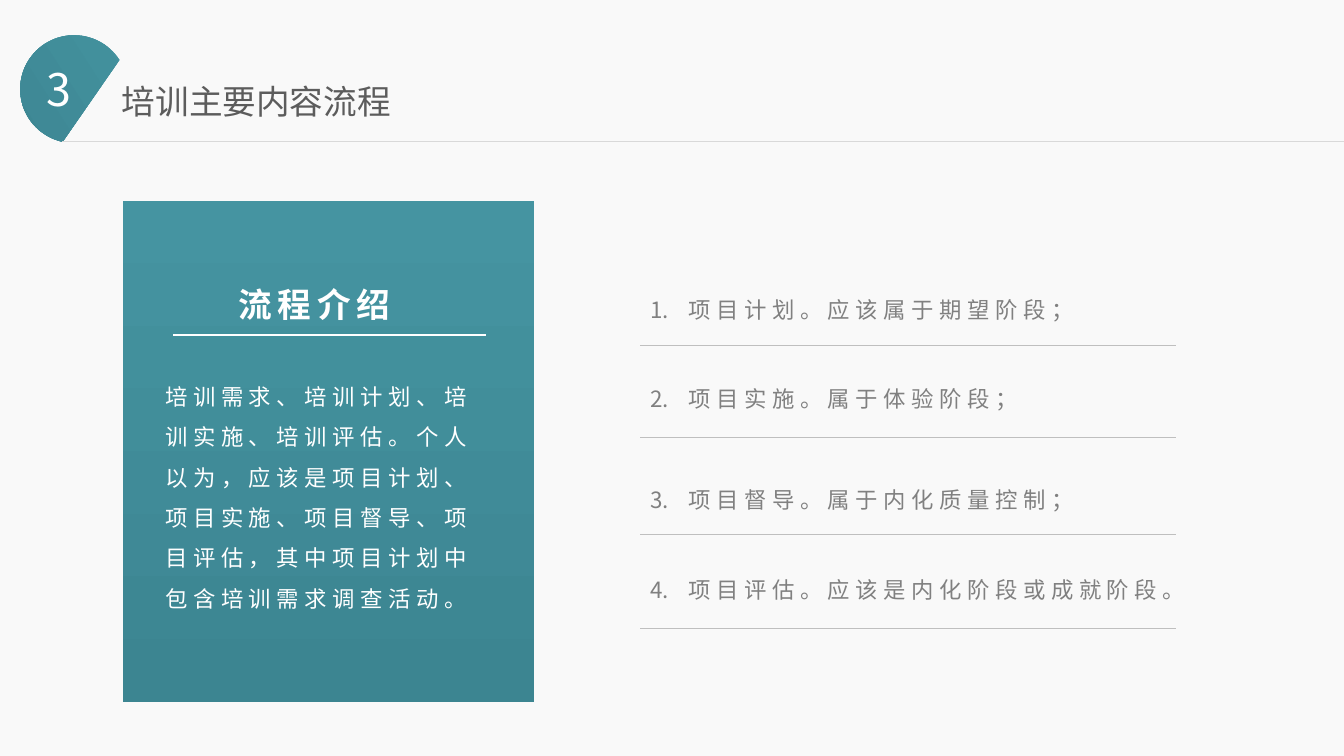
from dataclasses import dataclass
from typing import Optional

from lxml.etree import SubElement
from pptx import Presentation
from pptx.dml.color import RGBColor
from pptx.dml.fill import FillFormat
from pptx.enum.shapes import MSO_CONNECTOR, MSO_SHAPE
from pptx.enum.text import MSO_AUTO_SIZE
from pptx.oxml.ns import qn
from pptx.slide import Slide
from pptx.util import Inches, Pt

FONT = "Noto Sans CJK JP"
COLORS = {
    "background": "F9F9F9",
    "teal_light": "4594A1",
    "teal_dark": "3C8591",
    "title_light": "5C5C5C",
    "title_dark": "2F2F31",
    "white": "FFFFFF",
    "item": "808080",
    "header_rule": "D9D9D9",
    "item_rule": "BFBFBF",
}


@dataclass
class Panel:
    preset: MSO_SHAPE
    left: float
    top: float
    width: float
    height: float
    rotation: float = 0


@dataclass
class Rule:
    left: float
    right: float
    y: float
    color: str
    weight: float


@dataclass
class Label:
    text: str
    left: float
    top: float
    width: float
    height: float
    size: float
    color: str
    color_end: Optional[str] = None
    bold: bool = False
    spacing: float = 0
    line_spacing: float = 1
    number: Optional[int] = None


def rgb(name: str) -> RGBColor:
    return RGBColor.from_string(COLORS[name])


def set_gradient(fill: FillFormat, start: str, end: str, angle: float) -> None:
    fill.gradient()
    fill.gradient_angle = angle
    for stop, name, position in zip(fill.gradient_stops, (start, end), (0, 1)):
        stop.color.rgb = rgb(name)
        stop.position = position


def add_panel(page: Slide, panel: Panel) -> None:
    shape = page.shapes.add_shape(
        panel.preset, Inches(panel.left), Inches(panel.top),
        Inches(panel.width), Inches(panel.height))
    shape.rotation = panel.rotation
    shape.shadow.inherit = False
    shape.line.fill.background()
    set_gradient(shape.fill, "teal_light", "teal_dark", 270)


def add_rule(page: Slide, rule: Rule) -> None:
    line = page.shapes.add_connector(
        MSO_CONNECTOR.STRAIGHT, Inches(rule.left), Inches(rule.y),
        Inches(rule.right), Inches(rule.y))
    line.line.color.rgb = rgb(rule.color)
    line.line.width = Pt(rule.weight)
    SubElement(line._element.spPr, qn("a:effectLst"))


def add_label(page: Slide, label: Label) -> None:
    box = page.shapes.add_textbox(
        Inches(label.left), Inches(label.top),
        Inches(label.width), Inches(label.height))
    frame = box.text_frame
    frame.word_wrap = True
    frame.auto_size = MSO_AUTO_SIZE.SHAPE_TO_FIT_TEXT
    frame.text = label.text
    para = frame.paragraphs[0]
    para.line_spacing = label.line_spacing

    span = para.runs[0]
    span.font.size = Pt(label.size)
    span.font.bold = label.bold
    span.font.name = FONT
    if label.color_end:
        set_gradient(span.font.fill, label.color, label.color_end, 180)
    else:
        span.font.color.rgb = rgb(label.color)
    properties = span._r.get_or_add_rPr()
    properties.set("spc", str(round(label.spacing * 100)))
    SubElement(properties, qn("a:ea"), typeface=FONT)

    # Automatic numbering with a hanging indent
    if label.number is not None:
        layout = para._p.get_or_add_pPr()
        indent = Inches(0.38)
        layout.set("marL", str(indent))
        layout.set("indent", str(-indent))
        SubElement(layout, qn("a:buFont"), typeface="+mj-lt")
        SubElement(layout, qn("a:buAutoNum"), type="arabicPeriod",
                   startAt=str(label.number))


def main() -> None:
    deck = Presentation()
    deck.slide_width = Inches(13.33)
    deck.slide_height = Inches(7.5)
    page = deck.slides.add_slide(deck.slide_layouts[6])
    page.background.fill.solid()
    page.background.fill.fore_color.rgb = rgb("background")

    # Header
    add_panel(page, Panel(MSO_SHAPE.CHORD, 0.2, 0.35, 1.07, 1.07, 57.3))
    add_rule(page, Rule(0.62, 13.33, 1.4, "header_rule", 0.5))
    add_label(page, Label("培训主要内容流程", 1.11, 0.75, 4.19, 0.5, 24,
                          "title_light", color_end="title_dark"))
    add_label(page, Label("3", 0.36, 0.56, 0.52, 0.64, 32, "white"))

    # Introduction card
    add_panel(page, Panel(MSO_SHAPE.RECTANGLE, 1.22, 1.99, 4.08, 4.97))
    add_rule(page, Rule(1.72, 4.82, 3.32, "white", 1.5))
    add_label(page, Label("流程介绍", 2.27, 2.57, 1.99, 0.64, 24, "white",
                          bold=True, spacing=4, line_spacing=1.5))
    add_label(page, Label(
        "培训需求、培训计划、培训实施、培训评估。个人以为，应该是项目计划、"
        "项目实施、项目督导、项目评估，其中项目计划中包含培训需求调查活动。",
        1.54, 3.62, 3.45, 2.48, 16, "white", spacing=4, line_spacing=1.5))

    # Numbered steps, each above its rule
    steps = [
        ("项目计划。应该属于期望阶段；", 2.76, 4.5, 3.42),
        ("项目实施。属于体验阶段；", 3.64, 4.5, 4.34),
        ("项目督导。属于内化质量控制；", 4.64, 4.5, 5.3),
        ("项目评估。应该是内化阶段或成就阶段。", 5.53, 5.41, 6.23),
    ]
    for number, (text, top, width, rule_y) in enumerate(steps, start=1):
        add_rule(page, Rule(6.35, 11.66, rule_y, "item_rule", 0.25))
        add_label(page, Label(text, 6.35, top, width, 0.46, 16, "item",
                              spacing=4, line_spacing=1.5, number=number))

    deck.save("out.pptx")


if __name__ == "__main__":
    main()
